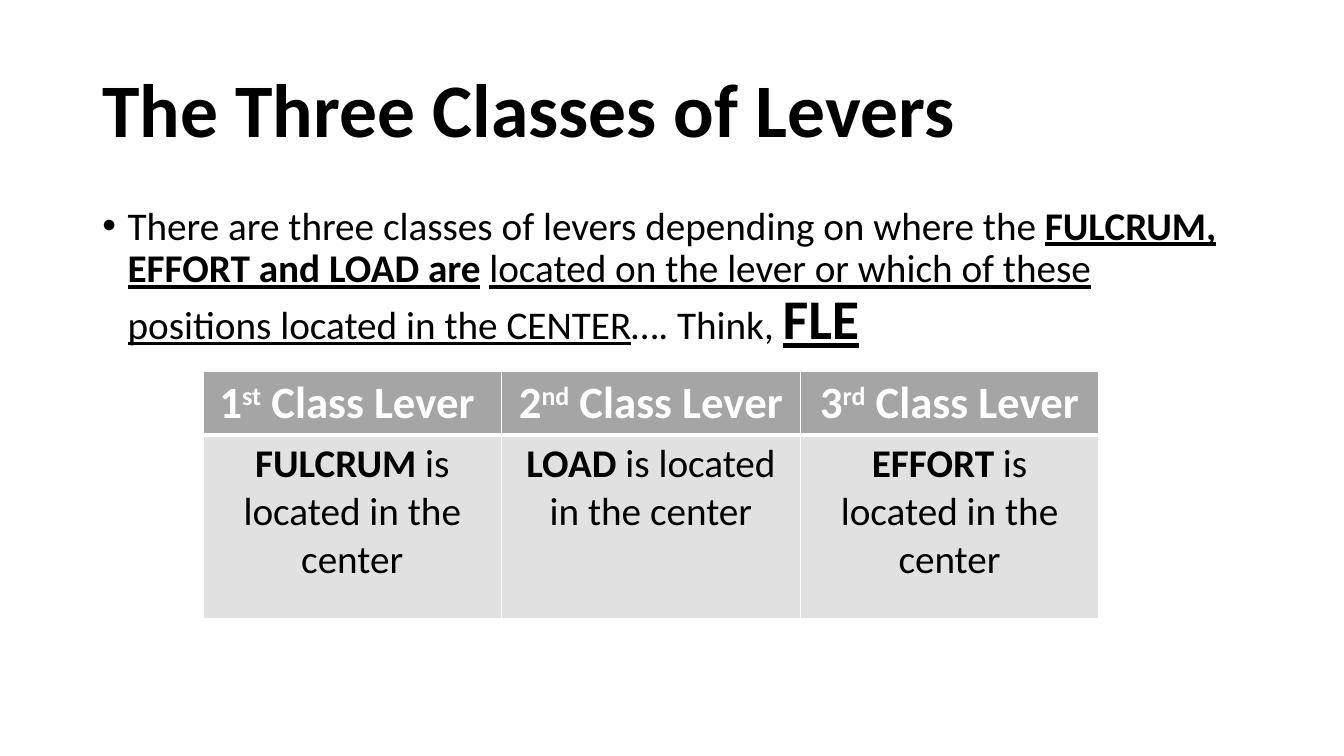
"""Build a slide on the three classes of levers."""
from dataclasses import dataclass, field
from typing import Any

from lxml.etree import SubElement
from pptx import Presentation
from pptx.dml.color import RGBColor
from pptx.enum.text import MSO_ANCHOR as Anchor, PP_ALIGN as Align
from pptx.oxml import parse_xml
from pptx.oxml.ns import nsdecls, qn
from pptx.util import Emu, Inches, Pt

BLACK = RGBColor(0x00, 0x00, 0x00)
WHITE = RGBColor(0xFF, 0xFF, 0xFF)
GREY = RGBColor(0xA5, 0xA5, 0xA5)
PALE = RGBColor(0xE1, 0xE1, 0xE1)
WIDTH, HEIGHT = Inches(13.33), Inches(7.5)


@dataclass
class Span:
    text: str
    fmt: dict[str, Any] = field(default_factory=dict)
    baseline: int = 0


@dataclass
class Box:
    left: float
    top: float
    width: float
    height: float

    def emu(self) -> tuple[Emu, Emu, Emu, Emu]:
        return (across(self.left), down(self.top),
                across(self.width), down(self.height))


@dataclass
class Lever:
    number: str
    suffix: str
    label: str
    middle: str


BOLD = {"bold": True}
LINED = {"underline": True}
TITLE_FMT = {"name": "Calibri", "size": Pt(54), "bold": True}
BODY_FMT = {"name": "Calibri", "size": Pt(28)}
HEAD_FMT = {"name": "Calibri", "size": Pt(32), "bold": True}

TITLE_BOX = Box(6.88, 5.33, 86.25, 19.33)
BODY_BOX = Box(6.88, 26.67, 86.25, 63.4)
TABLE_BOX = Box(15.1, 49.1, 66.66, 32.5)
ROW_SHARES = (8.2, 24.3)

TITLE = [Span("The Three Classes of Levers")]
BODY = [
    Span("There are three classes of levers depending on where the "),
    Span("FULCRUM, EFFORT and LOAD are", BOLD | LINED),
    Span(" "),
    Span("located on the lever or which of these positions "
         "located in the CENTER", LINED),
    Span("…. Think, "),
    Span("FLE", BOLD | LINED | {"size": Pt(40)}),
]
LEVERS = [
    Lever("1", "st", " Class Lever ", "FULCRUM"),
    Lever("2", "nd", " Class Lever", "LOAD"),
    Lever("3", "rd", " Class Lever", "EFFORT"),
]


def across(percent: float) -> Emu:
    return Emu(round(WIDTH * percent / 100))


def down(percent: float) -> Emu:
    return Emu(round(HEIGHT * percent / 100))


def write(p: Any, spans: list[Span], base: dict[str, Any],
          color: RGBColor) -> None:
    for span in spans:
        r = p.add_run()
        r.text = span.text
        for name, value in (base | span.fmt).items():
            setattr(r.font, name, value)
        r.font.color.rgb = color
        if span.baseline:
            r.font._element.set("baseline", str(span.baseline * 1000))


def add_text(s: Any, box: Box, spans: list[Span], base: dict[str, Any],
             anchor: Anchor) -> Any:
    tf = s.shapes.add_textbox(*box.emu()).text_frame
    tf.word_wrap = True
    tf.vertical_anchor = anchor
    p = tf.paragraphs[0]
    p.line_spacing = 0.9
    write(p, spans, base, BLACK)
    return p


def add_bullet(p: Any) -> None:
    pPr = p._p.get_or_add_pPr()
    pPr.set("marL", str(Inches(0.25)))
    pPr.set("indent", str(-Inches(0.25)))
    SubElement(pPr, qn("a:buFont"), typeface="Arial")
    SubElement(pPr, qn("a:buChar"), char="•")


def fill_cell(cell: Any, spans: list[Span], base: dict[str, Any],
              color: RGBColor, fill: RGBColor, edges: dict[str, float]) -> None:
    cell.fill.solid()
    cell.fill.fore_color.rgb = fill
    tcPr = cell._tc.get_or_add_tcPr()
    for i, (side, width) in enumerate(edges.items()):
        tcPr.insert(i, parse_xml(
            f'<a:ln{side} {nsdecls("a")} w="{Pt(width)}"><a:solidFill>'
            f'<a:srgbClr val="{WHITE}"/></a:solidFill></a:ln{side}>'))
    p = cell.text_frame.paragraphs[0]
    p.alignment = Align.CENTER
    write(p, spans, base, color)


def add_levers(s: Any) -> None:
    table = s.shapes.add_table(2, len(LEVERS), *TABLE_BOX.emu()).table
    table.horz_banding = False
    for row, share in zip(table.rows, ROW_SHARES):
        row.height = down(share)
    thin = dict.fromkeys("LRTB", 1)
    for col, lever in enumerate(LEVERS):
        head = [Span(lever.number), Span(lever.suffix, baseline=30),
                Span(lever.label)]
        fill_cell(table.cell(0, col), head, HEAD_FMT, WHITE, GREY,
                  thin | {"B": 3})
        fact = [Span(lever.middle, BOLD),
                Span(" is located in the center", {"bold": False})]
        fill_cell(table.cell(1, col), fact, BODY_FMT, BLACK, PALE,
                  thin | {"T": 3})


def main() -> None:
    prs = Presentation()
    prs.slide_width, prs.slide_height = WIDTH, HEIGHT
    s = prs.slides.add_slide(prs.slide_layouts[6])
    p = add_text(s, BODY_BOX, BODY, BODY_FMT, Anchor.TOP)
    p.space_before = Pt(10)
    add_bullet(p)
    add_text(s, TITLE_BOX, TITLE, TITLE_FMT, Anchor.MIDDLE)
    add_levers(s)
    prs.save("out.pptx")


if __name__ == "__main__":
    main()
